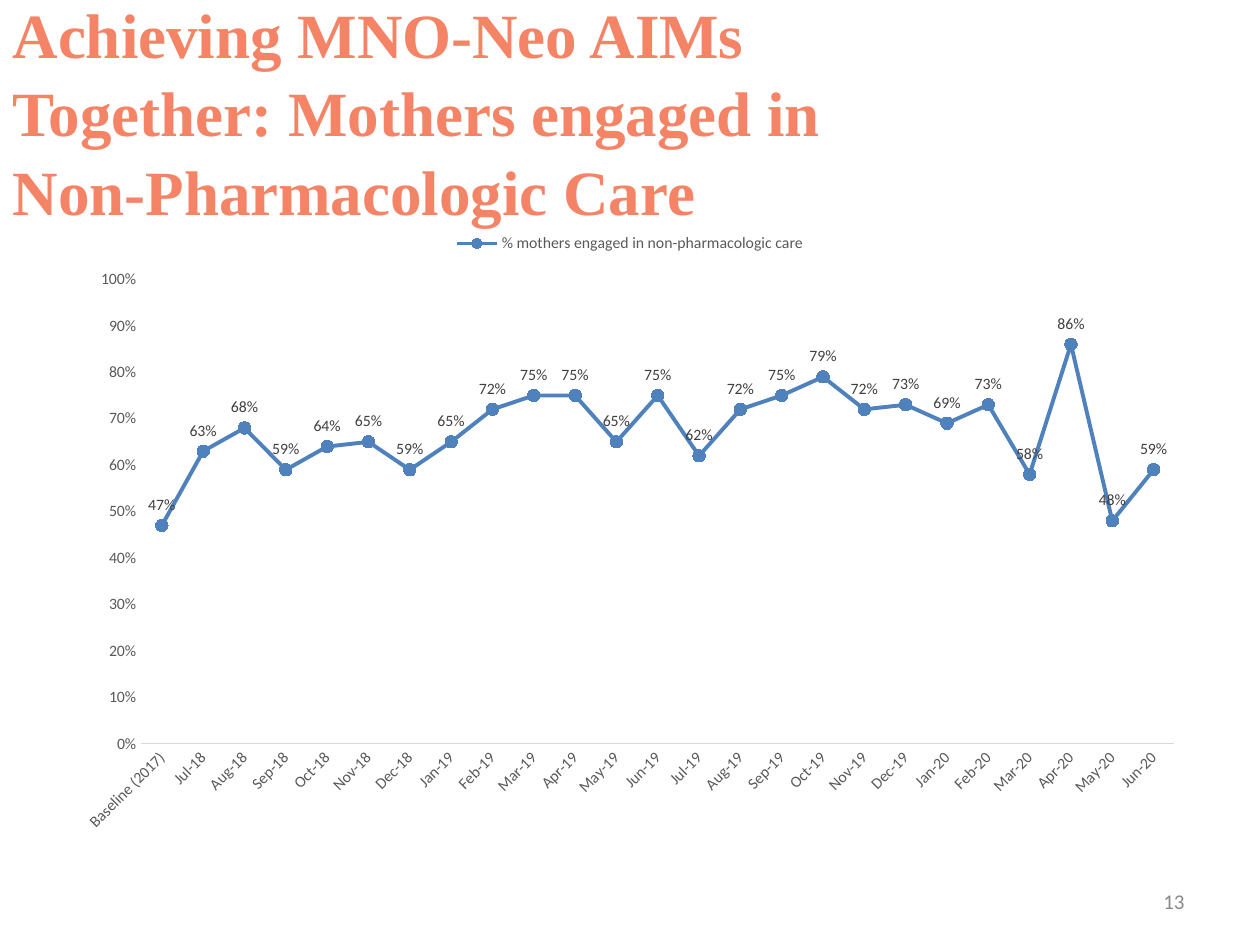
from pptx import Presentation
from pptx.chart.data import CategoryChartData
from pptx.dml.color import RGBColor
from pptx.enum.chart import (XL_CHART_TYPE, XL_LABEL_POSITION,
                             XL_LEGEND_POSITION, XL_MARKER_STYLE, XL_TICK_MARK)
from pptx.enum.text import MSO_ANCHOR, MSO_AUTO_SIZE, PP_ALIGN
from pptx.util import Inches, Pt

LINE = XL_CHART_TYPE.LINE_MARKERS
ABOVE = XL_LABEL_POSITION.ABOVE
TOP = XL_LEGEND_POSITION.TOP
CIRCLE = XL_MARKER_STYLE.CIRCLE
NO_TICK = XL_TICK_MARK.NONE
MIDDLE = MSO_ANCHOR.MIDDLE
NO_FIT = MSO_AUTO_SIZE.NONE
LEFT, RIGHT = PP_ALIGN.LEFT, PP_ALIGN.RIGHT

TITLE = "Achieving MNO-Neo AIMs Together: Mothers engaged in Non-Pharmacologic Care"
PAGE = "13"
NAME = "% mothers engaged in non-pharmacologic care"
YEARS = {
    "18": "Jul Aug Sep Oct Nov Dec",
    "19": "Jan Feb Mar Apr May Jun Jul Aug Sep Oct Nov Dec",
    "20": "Jan Feb Mar Apr May Jun",
}
RATES = [47, 63, 68, 59, 64, 65, 59, 65, 72, 75, 75, 65, 75,
         62, 72, 75, 79, 72, 73, 69, 73, 58, 86, 48, 59]
WIDE, HIGH = Inches(10), Inches(7.5)
BLUE, GREY = "4F81BD", "595959"


def color(code):
    return RGBColor.from_string(code)


def style(font, size, code, face="Calibri", bold=False):
    font.size, font.name, font.bold = Pt(size), face, bold
    font.color.rgb = color(code)


def place(shape, left, top, width, height):
    shape.left, shape.width = int(WIDE * left), int(WIDE * width)
    shape.top, shape.height = int(HIGH * top), int(HIGH * height)


def write(shape, text, align):
    frame = shape.text_frame
    frame.text = text
    frame.word_wrap = True
    frame.auto_size = NO_FIT
    frame.vertical_anchor = MIDDLE
    para = frame.paragraphs[0]
    para.alignment = align
    return para


def plot(slide):
    data = CategoryChartData(number_format="0%")
    data.categories = ["Baseline (2017)"] + [
        f"{month}-{year}" for year, months in YEARS.items()
        for month in months.split()]
    data.add_series(NAME, [rate / 100 for rate in RATES])
    frame = slide.shapes.add_chart(LINE, 0, 0, WIDE, HIGH, data)
    place(frame, 0.05, 0.233, 0.9, 0.66)
    chart = frame.chart
    style(chart.font, 10, "000000")
    chart.has_title = False
    chart.has_legend = True
    chart.legend.position = TOP
    chart.legend.include_in_layout = False
    style(chart.legend.font, 9, GREY)

    months, rates = chart.category_axis, chart.value_axis
    for axis in (months, rates):
        axis.major_tick_mark = axis.minor_tick_mark = NO_TICK
        axis.has_major_gridlines = False
        style(axis.tick_labels.font, 9, GREY)
    months.format.line.color.rgb = color("D9D9D9")
    months.format.line.width = Pt(0.75)
    months._element.txPr.bodyPr.set("rot", "-2700000")
    rates.format.line.fill.background()
    rates.minimum_scale, rates.maximum_scale, rates.major_unit = 0, 1, 0.1
    rates.tick_labels.number_format = "0%"
    rates.tick_labels.number_format_is_linked = False

    chart.plots[0].vary_by_categories = False
    line = chart.plots[0].series[0]
    line.smooth = False
    line.format.line.color.rgb = color(BLUE)
    line.format.line.width = Pt(2.25)
    mark = line.marker
    mark.style, mark.size = CIRCLE, 7
    mark.format.fill.solid()
    mark.format.fill.fore_color.rgb = color(BLUE)
    mark.format.line.color.rgb = color(BLUE)
    tags = line.data_labels
    tags.show_value = True
    tags.position = ABOVE
    tags.number_format = "0%"
    tags.number_format_is_linked = False
    style(tags.font, 9, "404040")


def main():
    deck = Presentation()
    deck.slide_width, deck.slide_height = WIDE, HIGH
    slide = deck.slides.add_slide(deck.slide_layouts[5])
    title = slide.shapes.title
    place(title, 0, 0.033, 0.733, 0.167)
    para = write(title, TITLE, LEFT)
    para.line_spacing = 1.04
    style(para.font, 36, "F58466", "Times New Roman", True)
    plot(slide)
    page = slide.shapes.add_textbox(0, 0, WIDE, HIGH)
    place(page, 0.717, 0.927, 0.233, 0.053)
    style(write(page, PAGE, RIGHT).font, 12, "898989")
    deck.save("out.pptx")


if __name__ == "__main__":
    main()
